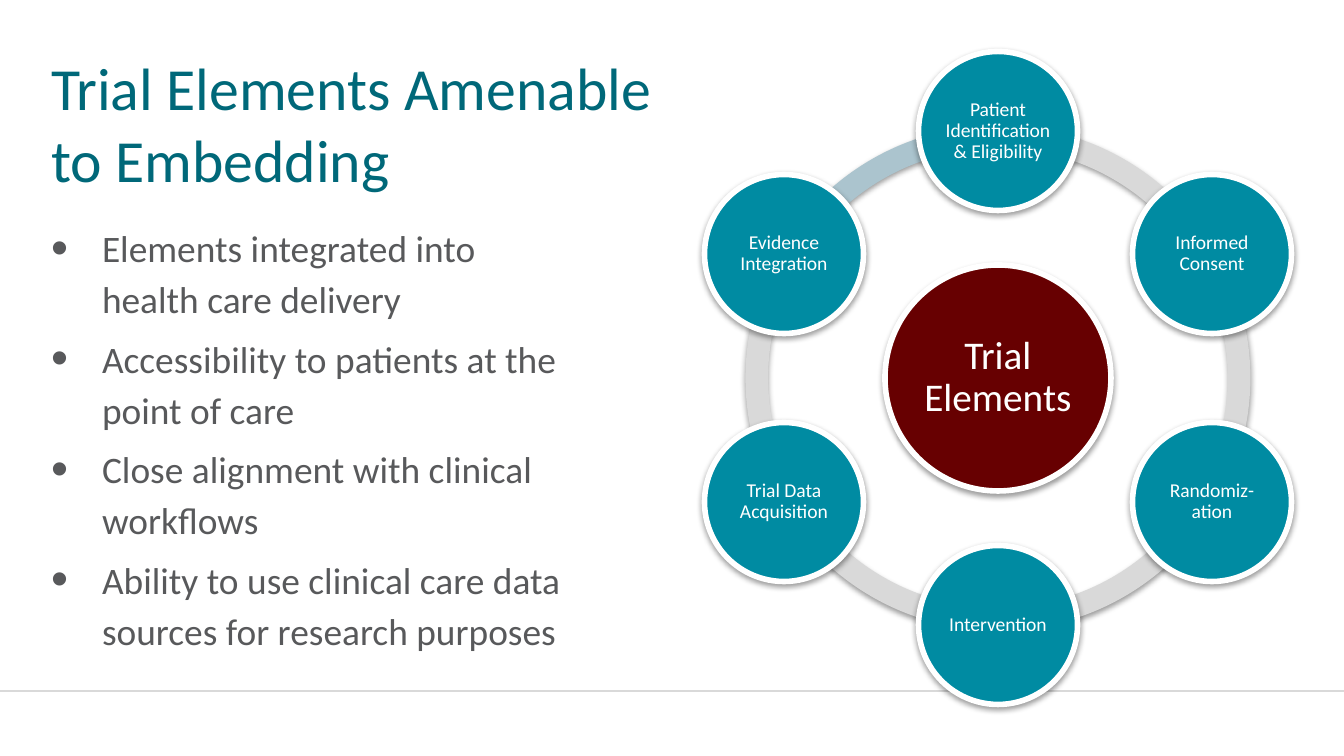
"""Build a slide on trial elements with a bullet list and a ring of steps."""
from dataclasses import dataclass
from math import cos, radians, sin

from lxml.etree import SubElement
from pptx import Presentation
from pptx.dml.color import RGBColor
from pptx.enum.shapes import MSO_CONNECTOR, MSO_SHAPE
from pptx.enum.text import MSO_ANCHOR, MSO_AUTO_SIZE, PP_ALIGN
from pptx.oxml.ns import qn
from pptx.shapes.autoshape import Shape
from pptx.shapes.shapetree import SlideShapes
from pptx.text.text import TextFrame
from pptx.util import Emu, Pt

SCALE = 914400 / 134.4


@dataclass(frozen=True)
class Theme:
    """Colours, type sizes and font of the slide."""
    font: str = "Calibri"
    title: str = "006879"
    body: str = "58595B"
    white: str = "FFFFFF"
    rule: str = "D9D9D9"
    accent_arc: str = "ABC4CE"
    hub: str = "670001"
    step: str = "008BA2"
    shadow: str = "000000"
    title_size: float = 32
    body_size: float = 20
    hub_size: float = 21
    step_size: float = 10.5


@dataclass(frozen=True)
class Circle:
    """A labelled circle given by its centre and diameter in px."""
    label: str
    x: int
    y: int
    diameter: int
    fill: str
    size: float
    inset: int


THEME = Theme()
CENTER_X, CENTER_Y = 998, 378
RING_DIAMETER, ORBIT = 505, 247
TITLE = "Trial Elements Amenable to Embedding"
BULLETS = [
    "Elements integrated into health care delivery",
    "Accessibility to patients at the point of care",
    "Close alignment with clinical workflows",
    "Ability to use clinical care data sources for research purposes",
]
STEPS = [
    "Patient Identification & Eligibility",
    "Informed Consent",
    "Randomiz-ation",
    "Intervention",
    "Trial Data Acquisition",
    "Evidence Integration",
]


def px(length: float) -> Emu:
    """Turn px into EMU."""
    return Emu(round(length * SCALE))


def place(shape: Shape, left: int, top: int, width: int, height: int) -> None:
    """Move and size a shape in px."""
    shape.left, shape.top = px(left), px(top)
    shape.width, shape.height = px(width), px(height)


def write_text(frame: TextFrame, lines: list[str], *, size: float, color: str,
               align: PP_ALIGN = PP_ALIGN.LEFT, anchor: MSO_ANCHOR = MSO_ANCHOR.MIDDLE,
               inset: int = 0, line_spacing: float = 1.0, space_after: float = 0,
               indent: int = 0) -> None:
    """Fill a text frame with one paragraph a line, bulleted when indented."""
    frame.word_wrap = True
    frame.auto_size = MSO_AUTO_SIZE.NONE
    frame.vertical_anchor = anchor
    frame.margin_left = frame.margin_right = px(inset)
    frame.margin_top = frame.margin_bottom = px(inset)
    frame.text = "\n".join(lines)
    for paragraph in frame.paragraphs:
        paragraph.alignment = align
        paragraph.line_spacing = line_spacing
        paragraph.space_before = Pt(0)
        paragraph.space_after = Pt(space_after)
        if indent:
            properties = paragraph._p.get_or_add_pPr()
            properties.set("marL", str(px(indent)))
            properties.set("indent", str(-px(indent)))
            SubElement(properties, qn("a:buSzPct"), val="130000")
            SubElement(properties, qn("a:buChar"), char="•")
        paragraph.font.name = THEME.font
        paragraph.font.size = Pt(size)
        paragraph.font.color.rgb = RGBColor.from_string(color)


def add_filled_shape(shapes: SlideShapes, kind: MSO_SHAPE, x: int, y: int,
                     diameter: int, fill: str) -> Shape:
    """Add a round shape about a centre, with a soft shadow below it."""
    corner = px(x - diameter / 2), px(y - diameter / 2)
    shape = shapes.add_shape(kind, *corner, px(diameter), px(diameter))
    shape.fill.solid()
    shape.fill.fore_color.rgb = RGBColor.from_string(fill)
    shape.line.fill.background()
    shape.shadow.inherit = False
    effects = shape._element.spPr.find(qn("a:effectLst"))
    shadow = SubElement(effects, qn("a:outerShdw"), blurRad=str(Pt(3.1)),
                        dist=str(Pt(1.6)), dir="5400000", rotWithShape="0")
    shadow_color = SubElement(shadow, qn("a:srgbClr"), val=THEME.shadow)
    SubElement(shadow_color, qn("a:alpha"), val="38000")
    return shape


def add_arc(shapes: SlideShapes, start: int, sweep: int, fill: str) -> None:
    """Add one ring segment, with angles in degrees."""
    arc = add_filled_shape(shapes, MSO_SHAPE.BLOCK_ARC, CENTER_X, CENTER_Y,
                           RING_DIAMETER, fill)
    arc.adjustments[0] = start % 360 * 0.6
    arc.adjustments[1] = (start + sweep) % 360 * 0.6
    arc.adjustments[2] = 0.045


def add_circle(shapes: SlideShapes, circle: Circle) -> None:
    """Add a white-rimmed circle with its label."""
    shape = add_filled_shape(shapes, MSO_SHAPE.OVAL, circle.x, circle.y,
                             circle.diameter, circle.fill)
    shape.line.color.rgb = RGBColor.from_string(THEME.white)
    shape.line.width = Pt(3)
    write_text(shape.text_frame, [circle.label], size=circle.size, color=THEME.white,
               align=PP_ALIGN.CENTER, inset=circle.inset, line_spacing=0.9)


def add_rule(shapes: SlideShapes, y: int, width: int) -> None:
    """Add the thin line above the footer."""
    rule = shapes.add_connector(MSO_CONNECTOR.STRAIGHT, px(0), px(y), px(width), px(y))
    rule.line.color.rgb = RGBColor.from_string(THEME.rule)
    rule.line.width = Pt(0.75)
    SubElement(rule._element.spPr, qn("a:effectLst"))


def add_ring(shapes: SlideShapes) -> None:
    """Add the ring segments, the hub and the steps around it."""
    sweep = 360 // len(STEPS)
    for index in range(len(STEPS)):
        add_arc(shapes, 210 - index * sweep, sweep,
                THEME.rule if index else THEME.accent_arc)
    add_circle(shapes, Circle("Trial Elements", CENTER_X, CENTER_Y, 226,
                              THEME.hub, THEME.hub_size, 4))
    for index, label in enumerate(STEPS):
        angle = radians(index * sweep - 90)
        add_circle(shapes, Circle(label, round(CENTER_X + ORBIT * cos(angle)),
                                  round(CENTER_Y + ORBIT * sin(angle)), 159,
                                  THEME.step, THEME.step_size, 3))


def main() -> None:
    """Build and save the presentation."""
    presentation = Presentation()
    presentation.slide_width, presentation.slide_height = px(1344), px(756)
    slide = presentation.slides.add_slide(presentation.slide_layouts[1])
    title, body = slide.placeholders
    place(title, 51, 79, 628, 87)
    write_text(title.text_frame, [TITLE], size=THEME.title_size, color=THEME.title)
    place(body, 51, 219, 517, 438)
    write_text(body.text_frame, BULLETS, size=THEME.body_size, color=THEME.body,
               anchor=MSO_ANCHOR.TOP, line_spacing=1.14, space_after=4.5, indent=51)
    add_rule(slide.shapes, 691, 1344)
    add_ring(slide.shapes)
    presentation.save("out.pptx")


if __name__ == "__main__":
    main()
